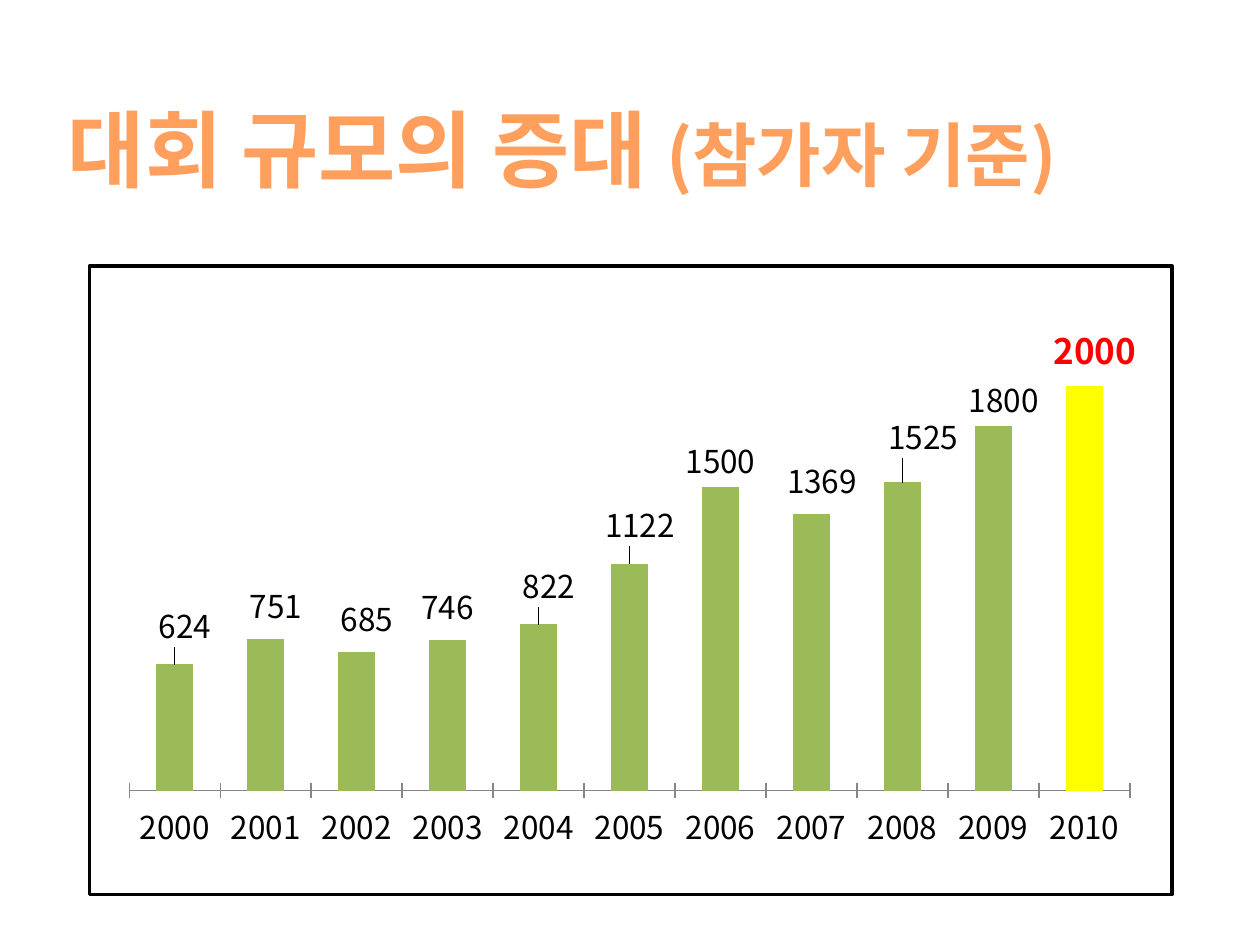
"""Build a slide with a column chart of yearly participant numbers."""
import pptx
import pptx.chart.data
import pptx.dml.color
import pptx.enum.chart
import pptx.enum.shapes
import pptx.enum.text
import pptx.oxml
import pptx.oxml.ns
import pptx.util
from pptx.util import Inches

TITLE = [("대회 규모의 증대 ", 48), ("(참가자 기준)", 40)]
COUNTS = {
    "2000": 624, "2001": 751, "2002": 685, "2003": 746, "2004": 822, "2005": 1122,
    "2006": 1500, "2007": 1369, "2008": 1525, "2009": 1800, "2010": 2000,
}
LABEL_SHIFTS = [
    (0.01, -0.02), (0.01, -0.01), (0.01, -0.01), (0, -0.01), (0.01, -0.02), (0.01, -0.02),
    (0, 0), (0.01, -0.01), (0.02, -0.03), (0.01, 0), (0.01, -0.01),
]
PLOT = {"layoutTarget": "inner", "xMode": "edge", "yMode": "edge",
        "x": 0, "y": 0, "w": 0.96, "h": 0.83}
THEME = {
    "font": "Noto Sans CJK KR", "title": "FF9F5D", "text": "000000", "frame": "FFFFFF",
    "bar": "9BBB59", "peak": "FFFF00", "peak_text": "FF0000", "axis": "868686",
    "size": 18, "peak_size": 20,
}


def color(name):
    return pptx.dml.color.RGBColor.from_string(THEME[name])


def set_all(obj, values):
    for name, value in values.items():
        setattr(obj, name, value)


def set_font(font, size, name, bold=False):
    set_all(font, {"name": THEME["font"], "size": pptx.util.Pt(size), "bold": bold})
    font.color.rgb = color(name)


def paint(fill, name):
    fill.solid()
    fill.fore_color.rgb = color(name)


def manual_layout(values):
    items = "".join(f'<c:{tag} val="{value}"/>' for tag, value in values.items())
    ns = pptx.oxml.ns.nsdecls("c")
    return pptx.oxml.parse_xml(f"<c:layout {ns}><c:manualLayout>{items}</c:manualLayout></c:layout>")


def add_title(s):
    tf = s.shapes.add_textbox(Inches(0.44), Inches(0.66), Inches(9.61), Inches(1.02)).text_frame
    set_all(tf, {"word_wrap": True, "vertical_anchor": pptx.enum.text.MSO_ANCHOR.MIDDLE})
    for text, size in TITLE:
        r = tf.paragraphs[0].add_run()
        r.text = text
        set_font(r.font, size, "title", True)
        ea = pptx.oxml.parse_xml(f'<a:ea {pptx.oxml.ns.nsdecls("a")} typeface="{THEME["font"]}"/>')
        r.font._element.find(pptx.oxml.ns.qn("a:latin")).addnext(ea)


def add_frame(s):
    sp = s.shapes.add_shape(pptx.enum.shapes.MSO_SHAPE.RECTANGLE,
                            Inches(0.71), Inches(2.11), Inches(8.59), Inches(4.99))
    sp.shadow.inherit = False
    paint(sp.fill, "frame")
    sp.line.color.rgb = color("text")
    sp.line.width = pptx.util.Pt(2)


def add_labels(chart, series):
    peak = len(COUNTS) - 1
    for i in range(len(COUNTS)):
        label = series.points[i].data_label
        label.position = pptx.enum.chart.XL_LABEL_POSITION.OUTSIDE_END
        if i == peak:
            r = label.text_frame.paragraphs[0].add_run()
            r.text = str(list(COUNTS.values())[i])
            set_font(r.font, THEME["peak_size"], "peak_text", True)
        else:
            set_font(label.font, THEME["size"], "text")
    for node, (x, y) in zip(chart.element.xpath(".//c:dLbl"), LABEL_SHIFTS):
        node.find(pptx.oxml.ns.qn("c:idx")).addnext(manual_layout({"x": x, "y": y}))
    paint(series.points[peak].format.fill, "peak")


def add_chart(s):
    data = pptx.chart.data.CategoryChartData()
    data.categories = list(COUNTS)
    data.add_series("Series 1", list(COUNTS.values()))
    chart = s.shapes.add_chart(pptx.enum.chart.XL_CHART_TYPE.COLUMN_CLUSTERED,
                               Inches(1.02), Inches(2.26), Inches(8.28), Inches(4.84), data).chart
    set_all(chart, {"has_legend": False, "has_title": False})
    set_font(chart.font, THEME["size"], "text")
    set_all(chart.plots[0], {"gap_width": 150, "vary_by_categories": False})
    set_all(chart.value_axis, {"visible": False, "has_major_gridlines": False,
                               "minimum_scale": 0, "maximum_scale": 2500})
    chart.category_axis.major_tick_mark = pptx.enum.chart.XL_TICK_MARK.CROSS
    chart.category_axis.format.line.color.rgb = color("axis")
    series = chart.plots[0].series[0]
    paint(series.format.fill, "bar")
    add_labels(chart, series)
    area = chart.element.xpath(".//c:plotArea")[0]
    for old in area.findall(pptx.oxml.ns.qn("c:layout")):
        area.remove(old)
    area.insert(0, manual_layout(PLOT))


def main():
    prs = pptx.Presentation()
    set_all(prs, {"slide_width": Inches(10), "slide_height": Inches(7.5)})
    s = prs.slides.add_slide(prs.slide_layouts[6])
    add_title(s)
    add_frame(s)
    add_chart(s)
    prs.save("out.pptx")


if __name__ == "__main__":
    main()
